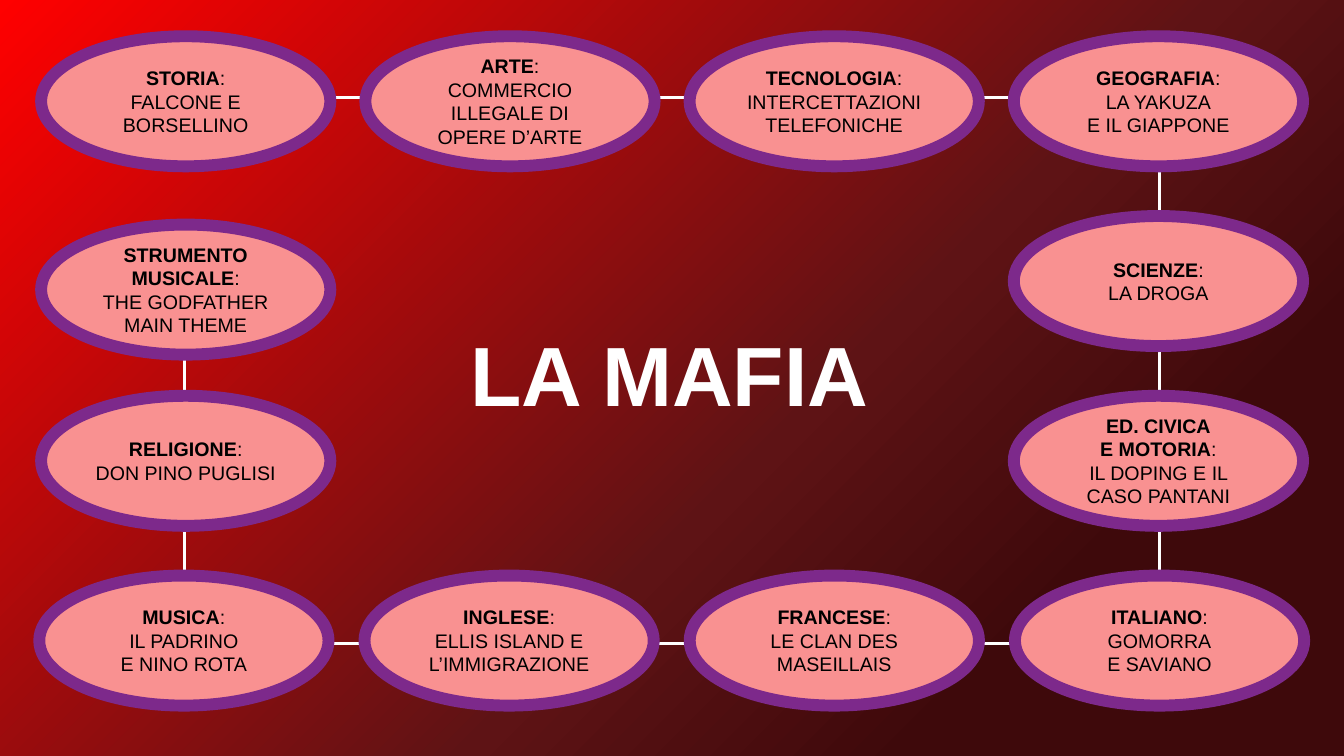
"""Build the LA MAFIA concept map: a title ringed by linked subject ellipses."""
from lxml import etree
from pptx import Presentation
from pptx.dml.color import RGBColor
from pptx.enum import shapes, text
from pptx.oxml import parse_xml
from pptx.oxml.ns import qn
from pptx.util import Pt

TITLE = "LA MAFIA"
TOP = [
    (["STORIA"], ["FALCONE E BORSELLINO"]),
    (["ARTE"], ["COMMERCIO ILLEGALE DI OPERE D’ARTE"]),
    (["TECNOLOGIA"], ["INTERCETTAZIONI TELEFONICHE"]),
    (["GEOGRAFIA"], ["LA YAKUZA", "E IL GIAPPONE"]),
]
BOTTOM = [
    (["MUSICA"], ["IL PADRINO", "E NINO ROTA"]),
    (["INGLESE"], ["ELLIS ISLAND E L’IMMIGRAZIONE"]),
    (["FRANCESE"], ["LE CLAN DES MASEILLAIS"]),
    (["ITALIANO"], ["GOMORRA", "E SAVIANO"]),
]
LEFT = [
    (["STRUMENTO MUSICALE"], ["THE GODFATHER MAIN THEME"]),
    (["RELIGIONE"], ["DON PINO PUGLISI"]),
]
RIGHT = [
    (["SCIENZE"], ["LA DROGA"]),
    (["ED. CIVICA", "E MOTORIA"], ["IL DOPING E IL CASO PANTANI"]),
]

THEME = {
    "font": "Arial", "title": 60, "body": 14,
    "white": "FFFFFF", "black": "000000", "fill": "F99191", "rim": "7D298B",
    "rim_width": 8.5, "link_width": 2,
    "gradient": [(0, "FF0000"), (58, "5E1315"), (79, "3E090B"), (100, "3E090B")],
}

W, H = 960, 540
OVAL_W, OVAL_H = 206.6, 92.9
X0, X_STEP = 29.4, 231.6
BOTTOM_X0, BOTTOM_STEP = 28.1, 232.3
Y0, Y_STEP = 25.9, 128.4
STRUMENTO_Y = 160.4
LINK_L, LINK_R, LINK_T, LINK_B = 131.8, 828, 69.8, 459.4
LINKS = [
    (LINK_L, LINK_T, LINK_R, LINK_T),
    (LINK_L, LINK_B, LINK_R, LINK_B),
    (LINK_R, LINK_T, LINK_R, LINK_B),
    (LINK_L, LINK_B, LINK_L, 203.8),
]


def color(name):
    return RGBColor.from_string(THEME[name])


def set_background(s):
    ns = "http://schemas.openxmlformats.org/drawingml/2006/main"
    stops = "".join(
        f'<a:gs pos="{pos * 1000}"><a:srgbClr val="{rgb}"/></a:gs>'
        for pos, rgb in THEME["gradient"])
    grad = parse_xml(
        f'<a:gradFill xmlns:a="{ns}" rotWithShape="1"><a:gsLst>{stops}</a:gsLst>'
        '<a:path path="circle"><a:fillToRect r="100000" b="100000"/></a:path>'
        '</a:gradFill>')
    s.background.fill.gradient()
    old = next(s.element.iter(qn("a:gradFill")))
    old.getparent().replace(old, grad)


def add_link(s, ends):
    c = s.shapes.add_connector(shapes.MSO_CONNECTOR.STRAIGHT, *map(Pt, ends))
    c.line.color.rgb = color("white")
    c.line.width = Pt(THEME["link_width"])
    etree.SubElement(c._element.spPr, qn("a:effectLst"))


def add_run(p, words, **fmt):
    r = p.add_run()
    r.text = words
    r.font.color.rgb = color(fmt.pop("color"))
    for key, value in {"name": THEME["font"], **fmt}.items():
        setattr(r.font, key, value)


def set_frame(tf, anchor):
    frame = {
        "word_wrap": True, "vertical_anchor": anchor,
        "margin_left": Pt(7.2), "margin_right": Pt(7.2),
        "margin_top": Pt(3.6), "margin_bottom": Pt(3.6),
    }
    for key, value in frame.items():
        setattr(tf, key, value)


def add_oval(s, x, y, topic):
    sp = s.shapes.add_shape(shapes.MSO_SHAPE.OVAL, *map(Pt, (x, y, OVAL_W, OVAL_H)))
    sp.shadow.inherit = False
    sp.fill.solid()
    sp.fill.fore_color.rgb = color("fill")
    sp.line.color.rgb = color("rim")
    sp.line.width = Pt(THEME["rim_width"])
    tf = sp.text_frame
    set_frame(tf, text.MSO_ANCHOR.MIDDLE)
    heads, bodies = topic
    for i, line in enumerate(heads + bodies):
        p = tf.paragraphs[0] if i == 0 else tf.add_paragraph()
        p.alignment = text.PP_ALIGN.CENTER
        fmt = {"size": Pt(THEME["body"]), "color": "black"}
        add_run(p, line, bold=i < len(heads), **fmt)
        if i == len(heads) - 1:
            add_run(p, ":", bold=False, **fmt)


def add_title(s):
    sp = s.shapes.add_textbox(*map(Pt, (324.7, 226.8, 306.7, 79.9)))
    tf = sp.text_frame
    set_frame(tf, text.MSO_ANCHOR.TOP)
    p = tf.paragraphs[0]
    p.alignment = text.PP_ALIGN.CENTER
    add_run(p, TITLE, size=Pt(THEME["title"]), bold=True, color="white")


def main():
    prs = Presentation()
    prs.slide_width, prs.slide_height = Pt(W), Pt(H)
    s = prs.slides.add_slide(prs.slide_layouts[6])
    set_background(s)
    for ends in LINKS:
        add_link(s, ends)
    add_title(s)
    for col, topic in enumerate(TOP):
        add_oval(s, X0 + col * X_STEP, Y0, topic)
    for col, topic in enumerate(BOTTOM):
        add_oval(s, BOTTOM_X0 + col * BOTTOM_STEP, Y0 + 3 * Y_STEP, topic)
    for y, topic in zip((STRUMENTO_Y, Y0 + 2 * Y_STEP), LEFT):
        add_oval(s, X0, y, topic)
    for row, topic in enumerate(RIGHT, 1):
        add_oval(s, X0 + 3 * X_STEP, Y0 + row * Y_STEP, topic)
    prs.save("out.pptx")


if __name__ == "__main__":
    main()
